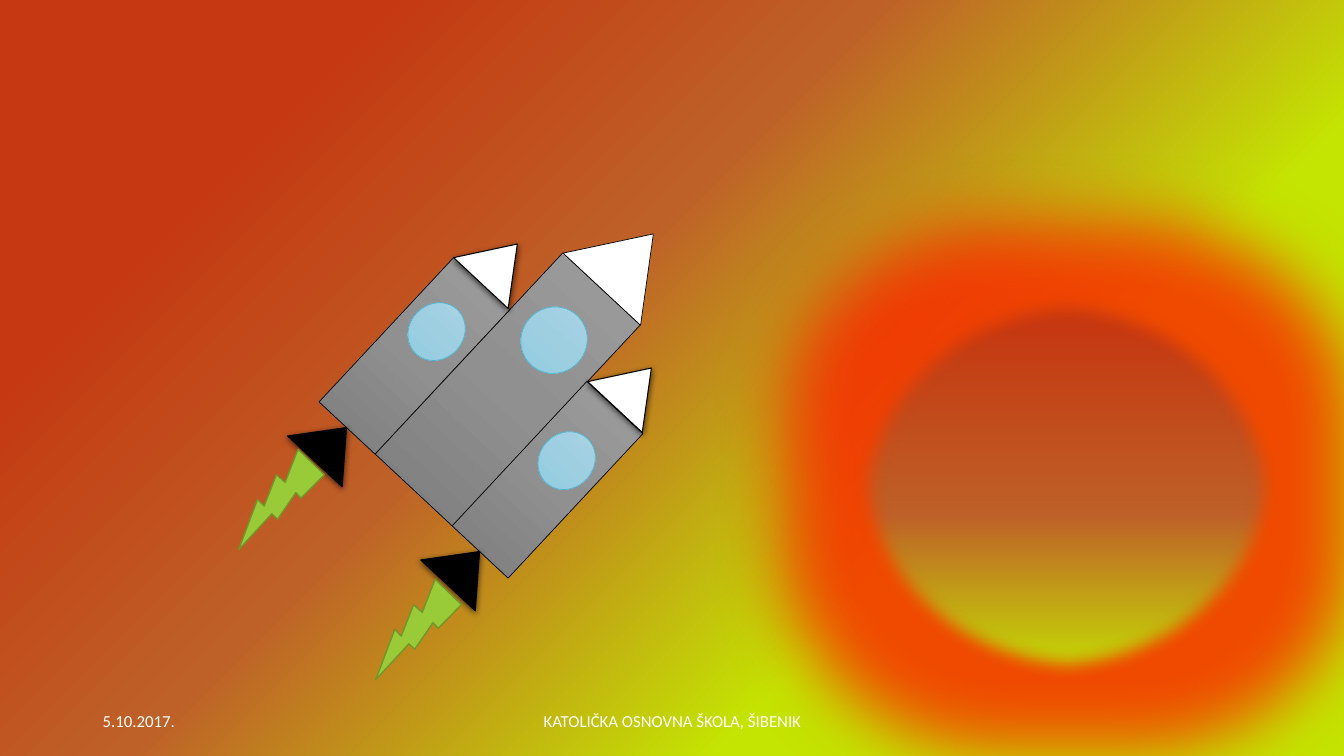
import pptx
import pptx.util
import pptx.dml.color
import pptx.enum.shapes
import pptx.enum.text
import pptx.oxml
import pptx.oxml.ns
from pptx.util import Inches

COLORS = {
    "red": "C53811", "rust": "BE6128", "lime": "C4E402", "glow": "FF1700",
    "metal_light": "9D9D9D", "metal": "909090", "metal_dark": "7C7C7C",
    "glass_light": "ACD6E6", "glass": "9ECFE1", "glass_dark": "8CCAE0",
    "glass_rim": "4EB3CF", "flame": "99CB38", "flame_rim": "719629",
    "black": "000000", "white": "FFFFFF",
}
METAL = [(0, "metal_light"), (50, "metal"), (100, "metal_dark")]
GLASS = [(0, "glass_light"), (50, "glass"), (100, "glass_dark")]
TILT = 43
NS = pptx.oxml.ns.nsdecls("a")
MSO = pptx.enum.shapes.MSO_SHAPE
ALIGN = pptx.enum.text.PP_ALIGN

SHADOW = f"""<a:outerShdw {NS} blurRad="57150" dist="19050" dir="5400000" algn="ctr"
  rotWithShape="0"><a:srgbClr val="{COLORS['black']}"><a:alpha val="63000"/></a:srgbClr></a:outerShdw>"""
GLOW = f"""<a:glow {NS} rad="1280160"><a:srgbClr val="{COLORS['glow']}">
  <a:alpha val="75000"/></a:srgbClr></a:glow>"""
SOFT_EDGE = f'<a:softEdge {NS} rad="161290"/>'

prs = pptx.Presentation()
prs.slide_width, prs.slide_height = Inches(13.33), Inches(7.5)
s = prs.slides.add_slide(prs.slide_layouts[6])


def paint(fill, root, look, angle=90):
    """Fill with one colour name or a list of (percent, colour name) stops."""
    if isinstance(look, str):
        fill.solid()
        fill.fore_color.rgb = pptx.dml.color.RGBColor.from_string(COLORS[look])
        return
    fill.gradient()
    fill.gradient_angle = 360 - angle
    stops = root.find(".//" + pptx.oxml.ns.qn("a:gsLst"))
    for gs in list(stops):
        stops.remove(gs)
    for pos, name in look:
        stops.append(pptx.oxml.parse_xml(
            f'<a:gs {NS} pos="{pos * 1000}"><a:srgbClr val="{COLORS[name]}"/></a:gs>'))


def add_text(text, left, width, size=12, font="Calibri", color="white", align=ALIGN.LEFT):
    tf = s.shapes.add_textbox(Inches(left), Inches(6.95), Inches(width), Inches(0.4)).text_frame
    tf.word_wrap = True
    tf.vertical_anchor = pptx.enum.text.MSO_ANCHOR.MIDDLE
    p = tf.paragraphs[0]
    p.alignment = align
    r = p.add_run()
    r.text = text
    r.font.size, r.font.name = pptx.util.Pt(size), font
    r.font.color.rgb = pptx.dml.color.RGBColor.from_string(COLORS[color])


# Background
paint(s.background.fill, s._element, [(18, "red"), (42, "rust"), (70, "lime")], angle=45)

# Planet and rocket parts, back to front:
# preset, size, positions, rotation, fill, line colour, line width, effects
parts = [
    # Planet
    (MSO.OVAL, (4.25, 3.84), [(8.45, 2.89)], 0,
     [(10, "red"), (58, "rust"), (100, "lime")], "rust", 1, [GLOW, SOFT_EDGE]),
    # Hull and side boosters
    (MSO.RECTANGLE, (1.05, 2.73), [(4.51, 2.5)], TILT, METAL, "black", 0.5, []),
    (MSO.RECTANGLE, (0.76, 1.96), [(3.73, 2.55), (5.05, 3.78)], TILT, METAL, "black", 0.5, []),
    # Nozzles
    (MSO.ISOSCELES_TRIANGLE, (0.74, 0.46), [(2.91, 4.18), (4.23, 5.41)], TILT,
     "black", "black", 0.75, [SHADOW]),
    # Nose cones
    (MSO.ISOSCELES_TRIANGLE, (1.05, 0.75), [(5.7, 2.22)], TILT, "white", "black", 0.5, []),
    (MSO.ISOSCELES_TRIANGLE, (0.74, 0.53), [(4.58, 2.35), (5.91, 3.58)], TILT,
     "white", "black", 0.75, [SHADOW]),
    # Windows
    (MSO.OVAL, (0.65, 0.67), [(5.17, 3.04)], TILT, GLASS, "glass_rim", 0.5, []),
    (MSO.OVAL, (0.54, 0.6), [(4.06, 2.99), (5.35, 4.27)], TILT, GLASS, "glass_rim", 0.5, []),
    # Flames
    (MSO.LIGHTNING_BOLT, (0.8, 1.02), [(2.35, 4.42), (3.71, 5.71)], 74.3,
     "flame", "flame_rim", 1, []),
]
for preset, (w, h), spots, turn, look, edge, edge_pt, effects in parts:
    for x, y in spots:
        sp = s.shapes.add_shape(preset, Inches(x), Inches(y), Inches(w), Inches(h))
        sp.rotation = turn
        paint(sp.fill, sp._element, look)
        sp.line.color.rgb = pptx.dml.color.RGBColor.from_string(COLORS[edge])
        sp.line.width = pptx.util.Pt(edge_pt)
        sp.shadow.inherit = False
        effect_list = sp._element.spPr.find(pptx.oxml.ns.qn("a:effectLst"))
        for effect in effects:
            effect_list.append(pptx.oxml.parse_xml(effect))

# Footer
add_text("5.10.2017.", 0.92, 3)
add_text("KATOLIČKA OSNOVNA ŠKOLA, ŠIBENIK", 4.42, 4.5, align=ALIGN.CENTER)

prs.save("out.pptx")
